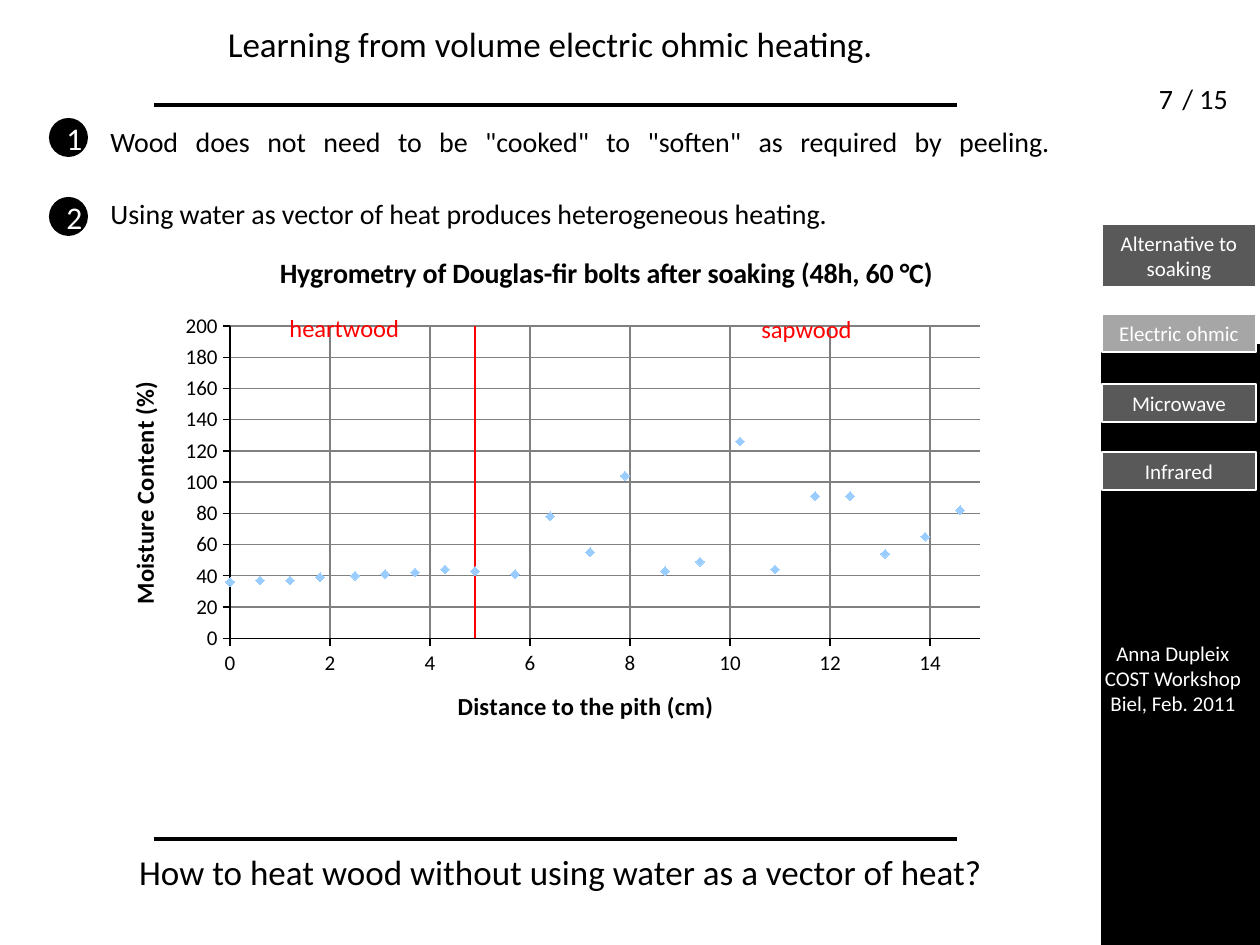
from lxml import etree
from pptx import Presentation
from pptx.chart.data import XyChartData
from pptx.dml.color import RGBColor as Rgb
from pptx.enum.chart import XL_CHART_TYPE as Kind, XL_MARKER_STYLE as Mark, XL_TICK_MARK as Tick
from pptx.enum.shapes import MSO_CONNECTOR as Conn, MSO_SHAPE as Geo
from pptx.enum.text import MSO_ANCHOR as Anchor, PP_ALIGN as Align
from pptx.oxml import parse_xml
from pptx.oxml.ns import nsdecls, qn
from pptx.util import Pt

PX = 914400 / 126
FONT = "Calibri"
HUES = {"black": "000000", "white": "FFFFFF", "dark": "595959", "light": "A6A6A6",
        "red": "FF0000", "dot": "99CCFF", "grid": "808080"}
hue = {name: Rgb.from_string(code) for name, code in HUES.items()}

prs = Presentation()
prs.slide_width, prs.slide_height = round(1260 * PX), round(945 * PX)
slide = prs.slides.add_slide(prs.slide_layouts[6])
shapes = slide.shapes


def box(rect, text="", size=12, ink="black", align=Align.CENTER, fill=None, line=None, geo=Geo.RECTANGLE):
    """Add a shape if it has a fill, else a text box; return its text frame."""
    dims = [round(n * PX) for n in rect]
    if fill:
        item = shapes.add_shape(geo, *dims)
        item.shadow.inherit = False
        item.fill.solid()
        item.fill.fore_color.rgb = hue[fill]
        if line:
            item.line.color.rgb = hue[line]
            item.line.width = Pt(0.75)
        else:
            item.line.fill.background()
    else:
        item = shapes.add_textbox(*dims)
    frame = item.text_frame
    frame.word_wrap = True
    frame.vertical_anchor = Anchor.TOP
    if text:
        frame.text = text
        for para in frame.paragraphs:
            para.alignment = align
            para.font.name, para.font.size = FONT, Pt(size)
            para.font.color.rgb = hue[ink]
    return frame


def place(node, **spots):
    """Give a chart part a fixed place, in fractions of the chart."""
    old = node.find(qn("c:layout"))
    if old is not None:
        node.remove(old)
    modes = '<c:layoutTarget val="inner"/>' if "w" in spots else ""
    modes += '<c:xMode val="edge"/><c:yMode val="edge"/>'
    modes += "".join(f'<c:{key} val="{val}"/>' for key, val in spots.items())
    lay = parse_xml(f'<c:layout {nsdecls("c")}><c:manualLayout>{modes}</c:manualLayout></c:layout>')
    text = node.find(qn("c:tx"))
    node.insert(0 if text is None else node.index(text) + 1, lay)


# Side bar with page count, author and menu
box((1101, 344, 159, 601), fill="black")
box((1170, 75, 80, 47), "/ 15", 16, align=Align.LEFT)
box((1126, 75, 80, 49), "7", 16)
box((1091, 634, 164, 92), "Anna Dupleix\vCOST Workshop\nBiel, Feb. 2011", ink="white")
menu = [("Alternative to soaking", 224, 63, "dark"), ("Electric ohmic", 314, 38, "light"),
        ("Microwave", 384, 38, "dark"), ("Infrared", 452, 38, "dark")]
for name, top, high, fill in menu:
    box((1102, top, 154, high), name, ink="white", fill=fill, line="white")

# Rules above and below the content
for y in (105, 839):
    rule = shapes.add_connector(Conn.STRAIGHT, *[round(n * PX) for n in (154, y, 957, y)])
    rule.line.color.rgb = hue["black"]
    rule.line.width = Pt(1.75)
    etree.SubElement(rule._element.spPr, qn("a:effectLst"))

# Title and closing question
box((15, 16, 1071, 64), "Learning from volume electric ohmic heating.", 20)
box((25, 844, 1071, 64), "How to heat wood without using water as a vector of heat?", 20)

# Numbered points; the line break stretches the first line to full width
points = box((98, 118, 965, 178),
             'Wood does not need to be "cooked" to "soften" as required by peeling.\v\n'
             "Using water as vector of heat produces heterogeneous heating.",
             16, align=Align.JUSTIFY, fill="white")
points.paragraphs[1].space_before = Pt(3)
for num, top in (("1", 118), ("2", 197)):
    disc = box((49, top, 39, 39), num, 18, "white", fill="black", geo=Geo.OVAL)
    disc.word_wrap = False
    disc.vertical_anchor = Anchor.MIDDLE
    disc.margin_left, disc.margin_right = round(12 * PX), 0
    disc.margin_top = disc.margin_bottom = 0

# Moisture chart
dist = [0, 0.6, 1.2, 1.8, 2.5, 3.1, 3.7, 4.3, 4.9, 5.7, 6.4, 7.2, 7.9, 8.7, 9.4, 10.2,
        10.9, 11.7, 12.4, 13.1, 13.9, 14.6]
moist = [36, 37, 37, 39, 40, 41, 42, 44, 43, 41, 78, 55, 104, 43, 49, 126,
         44, 91, 91, 54, 65, 82]
data = XyChartData()
for name, pairs in (("Series 1", zip(dist, moist)), ("Series 2", [(4.9, 0), (4.9, 200)])):
    group = data.add_series(name)
    for x, y in pairs:
        group.add_data_point(x, y)
chart = shapes.add_chart(Kind.XY_SCATTER, *[round(n * PX) for n in (105, 239, 893, 512)], data).chart
chart.has_legend = False
chart.font.name, chart.font.size = FONT, Pt(10)
chart.font.color.rgb = hue["black"]
plot = chart.plots[0]
plot.vary_by_categories = False

# Dots and the border between heartwood and sapwood
dots, edge = plot.series
dots.smooth = edge.smooth = False
dots.format.line.fill.background()
dots.marker.style, dots.marker.size = Mark.DIAMOND, 5
dots.marker.format.fill.solid()
dots.marker.format.fill.fore_color.rgb = hue["dot"]
dots.marker.format.line.color.rgb = hue["dot"]
edge.marker.style = Mark.NONE
edge.format.line.color.rgb = hue["red"]
edge.format.line.width = Pt(1.25)

# Axes and titles
x_axis, y_axis = chart.category_axis, chart.value_axis
for axis, top, step in ((x_axis, 15, 2), (y_axis, 200, 20)):
    axis.minimum_scale, axis.maximum_scale, axis.major_unit = 0, top, step
    axis.has_major_gridlines = True
    axis.major_gridlines.format.line.color.rgb = hue["grid"]
    axis.major_gridlines.format.line.width = Pt(0.75)
    axis.major_tick_mark, axis.minor_tick_mark = Tick.OUTSIDE, Tick.NONE
    axis.format.line.color.rgb = hue["black"]
    axis.format.line.width = Pt(0.75)
    axis.tick_labels.font.size = Pt(12)
    axis.tick_labels.number_format = "0"
    axis.tick_labels.number_format_is_linked = False
titles = [(chart.chart_title, "Hygrometry of Douglas-fir bolts after soaking (48h, 60 °C)", 16, 0.19, 0.02),
          (x_axis.axis_title, "Distance to the pith (cm)", 14, 0.39, 0.87),
          (y_axis.axis_title, "Moisture Content (%)", 14, 0.02, 0.27)]
for title, text, size, x, y in titles:
    title.text_frame.text = text
    font = title.text_frame.paragraphs[0].font
    font.name, font.size, font.bold = FONT, Pt(size), True
    font.color.rgb = hue["black"]
    place(title._element, x=x, y=y)
place(chart._chartSpace.chart.plotArea, x=0.14, y=0.17, w=0.84, h=0.61)

# Zone labels
box((277, 307, 194, 37), "heartwood", 14, "red", Align.LEFT)
box((749, 308, 159, 37), "sapwood", 14, "red", Align.LEFT)

prs.save("out.pptx")
